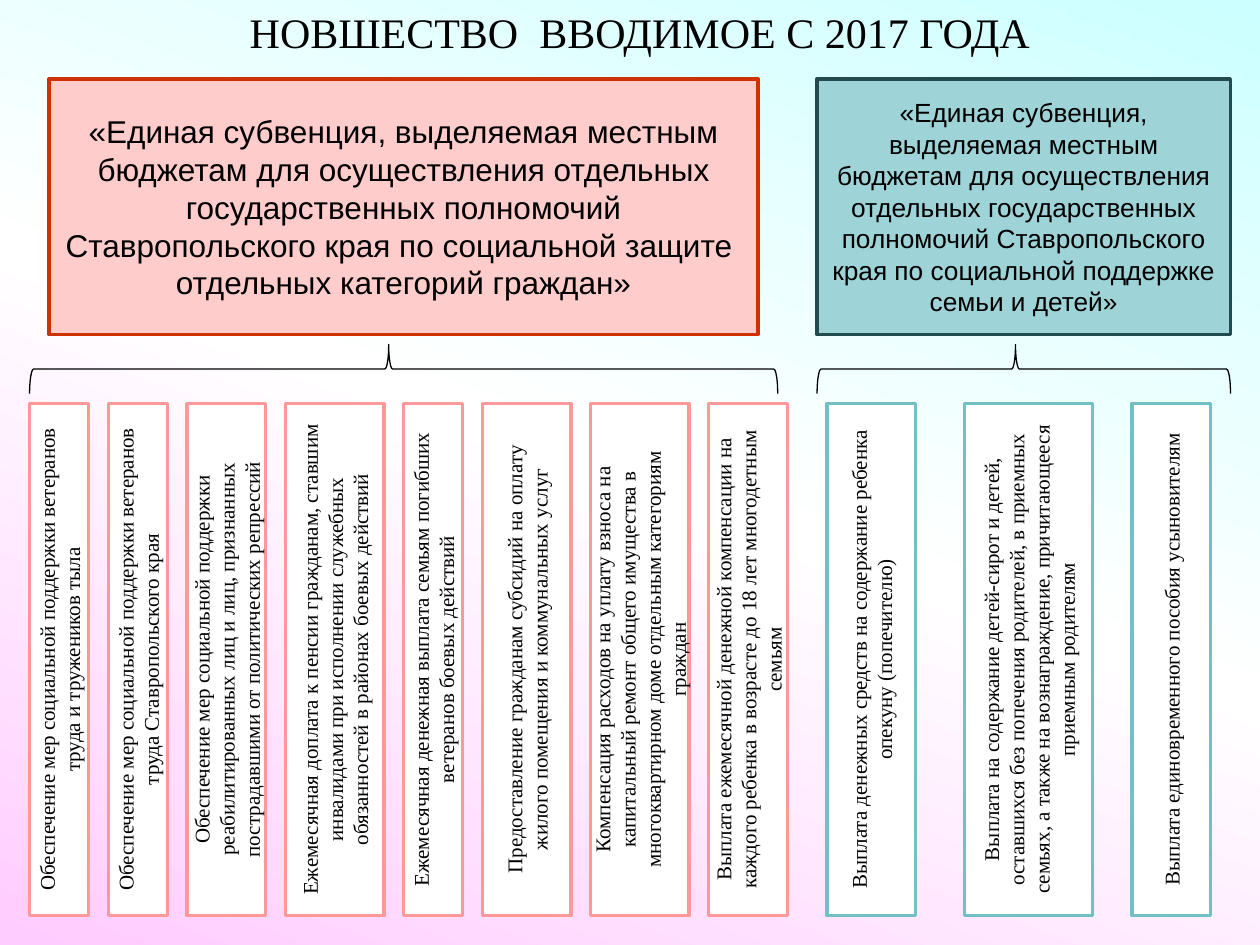
from copy import deepcopy

from pptx import Presentation
from pptx import util as u
from pptx.dml.color import RGBColor
from pptx.enum import shapes, text
from pptx.oxml.ns import qn

TITLE = "НОВШЕСТВО  ВВОДИМОЕ С 2017 ГОДА"
BACKGROUND = [(0, "CCFFFF"), (0.5, "FFFFFF"), (1, "FFCCFF")]

# Places and widths are in grid units, 64 to the slide's width.
# Each group: header, brace, and payments as (left, width, wording).
GROUPS = [
    {
        "header": "«Единая субвенция, выделяемая местным бюджетам для осуществления отдельных "
                  "государственных полномочий Ставропольского края по социальной защите  "
                  "отдельных категорий граждан»",
        "header_span": (2.5, 36), "size": 18, "fill": "FFCCCC", "line": "CC3300",
        "brace_span": (1.5, 38), "payment_line": "FF9999",
        "payments": [
            (1.5, 3, "Обеспечение мер социальной поддержки ветеранов труда и тружеников тыла"),
            (5.5, 3, "Обеспечение мер социальной поддержки ветеранов труда Ставропольского края"),
            (9.5, 4, "Обеспечение мер социальной поддержки реабилитированных лиц и лиц, "
                     "признанных пострадавшими от политических репрессий"),
            (14.5, 5, "Ежемесячная доплата к пенсии гражданам, ставшим инвалидами при исполнении "
                      "служебных обязанностей в районах боевых действий"),
            (20.5, 3, "Ежемесячная денежная выплата семьям погибших ветеранов боевых действий"),
            (24.5, 4.5, "Предоставление гражданам субсидий на оплату жилого помещения "
                        "и коммунальных услуг"),
            (30, 5, "Компенсация расходов на уплату взноса на капитальный ремонт общего "
                    "имущества в многоквартирном доме отдельным категориям граждан"),
            (36, 4, "Выплата ежемесячной денежной компенсации на каждого ребенка в возрасте "
                    "до 18 лет многодетным семьям"),
        ],
    },
    {
        "header": "«Единая субвенция, выделяемая местным бюджетам для осуществления отдельных "
                  "государственных полномочий Ставропольского края по социальной поддержке "
                  "семьи и детей»",
        "header_span": (41.5, 21), "size": 15, "fill": "9ED3D7", "line": "224B50",
        "brace_span": (41.5, 21), "payment_line": "72BFC5",
        "payments": [
            (42, 4.5, "Выплата денежных средств на содержание ребенка опекуну (попечителю)"),
            (49, 6.5, "Выплата на содержание детей-сирот и детей, оставшихся без попечения "
                      "родителей, в приемных семьях, а также на вознаграждение, причитающееся "
                      "приемным родителям"),
            (57.5, 4, "Выплата единовременного пособия усыновителям"),
        ],
    },
]
HEADER_ROW, BRACE_ROW, PAYMENT_ROW = (4, 13), (17.5, 2.5), (20.5, 26)  # top, height

deck = Presentation()
deck.slide_width, deck.slide_height = u.Inches(10), u.Inches(7.5)
UNIT = deck.slide_width / 64
slide = deck.slides.add_slide(deck.slide_layouts[6])


def color(value):
    return RGBColor.from_string(value)


def place(span, row):
    (left, width), (top, height) = span, row
    return [round(n * UNIT) for n in (left, top, width, height)]


def write(frame, wording, size, font):
    frame.word_wrap = True
    frame.text = wording
    paragraph = frame.paragraphs[0]
    paragraph.alignment = text.PP_ALIGN.CENTER
    run_font = paragraph.runs[0].font
    run_font.size, run_font.name = u.Pt(size), font
    run_font.color.rgb = color("000000")


def add_box(span, row, wording, size, font, fill, line):
    box = slide.shapes.add_shape(shapes.MSO_SHAPE.RECTANGLE, *place(span, row))
    box.shadow.inherit = False
    box.fill.solid()
    box.fill.fore_color.rgb = color(fill)
    box.line.color.rgb = color(line)
    box.line.width = u.Pt(2)
    write(box.text_frame, wording, size, font)
    box.text_frame.vertical_anchor = text.MSO_ANCHOR.MIDDLE
    return box


def add_brace(span, row):
    # A left brace turned a quarter: swap its sides around the same centre
    left, top, width, height = place(span, row)
    shift = (width - height) // 2
    brace = slide.shapes.add_shape(shapes.MSO_SHAPE.LEFT_BRACE,
                                   left + shift, top - shift, height, width)
    brace.rotation = 90
    brace.adjustments[0], brace.adjustments[1] = 0.08, 0.52
    brace.shadow.inherit = False
    brace.fill.background()
    brace.line.color.rgb = color("000000")
    brace.line.width = u.Pt(0.75)


# Background: three-stop gradient
backdrop = slide.background.fill
backdrop.gradient()
backdrop.gradient_angle = 250
stop_list = next(slide.element.iter(qn("a:gsLst")))
stop_list.insert(1, deepcopy(stop_list[0]))
for stop, (position, shade) in zip(backdrop.gradient_stops, BACKGROUND):
    stop.position = position
    stop.color.rgb = color(shade)

# Groups: header, brace, vertical payment boxes
for group in GROUPS:
    add_box(group["header_span"], HEADER_ROW, group["header"], group["size"], "Arial",
            group["fill"], group["line"])
    add_brace(group["brace_span"], BRACE_ROW)
    for left, width, wording in group["payments"]:
        payment = add_box((left, width), PAYMENT_ROW, wording, 12, "Times New Roman",
                          "FFFFFF", group["payment_line"])
        payment.text_frame._txBody.bodyPr.set("vert", "vert270")

# Title
title = slide.shapes.add_textbox(*place((2.5, 60), (0, 3.2)))
write(title.text_frame, TITLE, 24, "Times New Roman")
title.text_frame.auto_size = text.MSO_AUTO_SIZE.SHAPE_TO_FIT_TEXT

deck.save("out.pptx")
